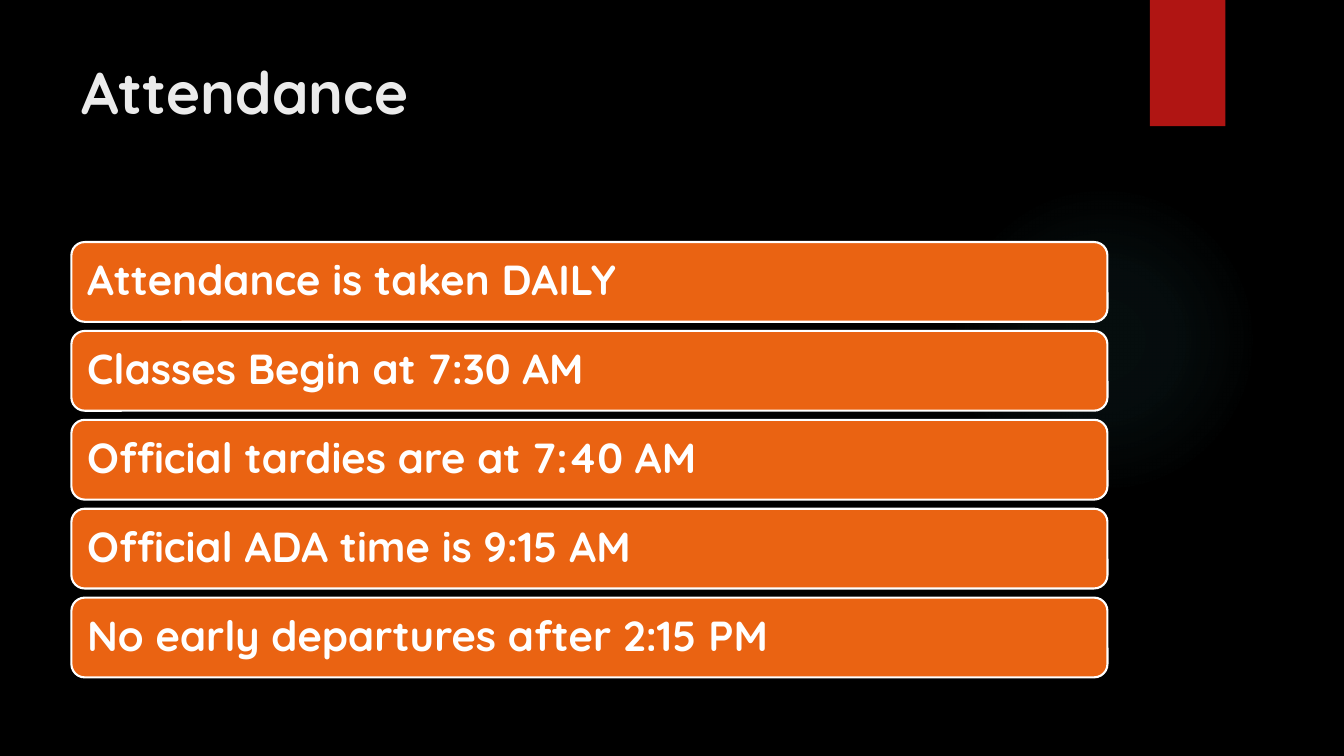
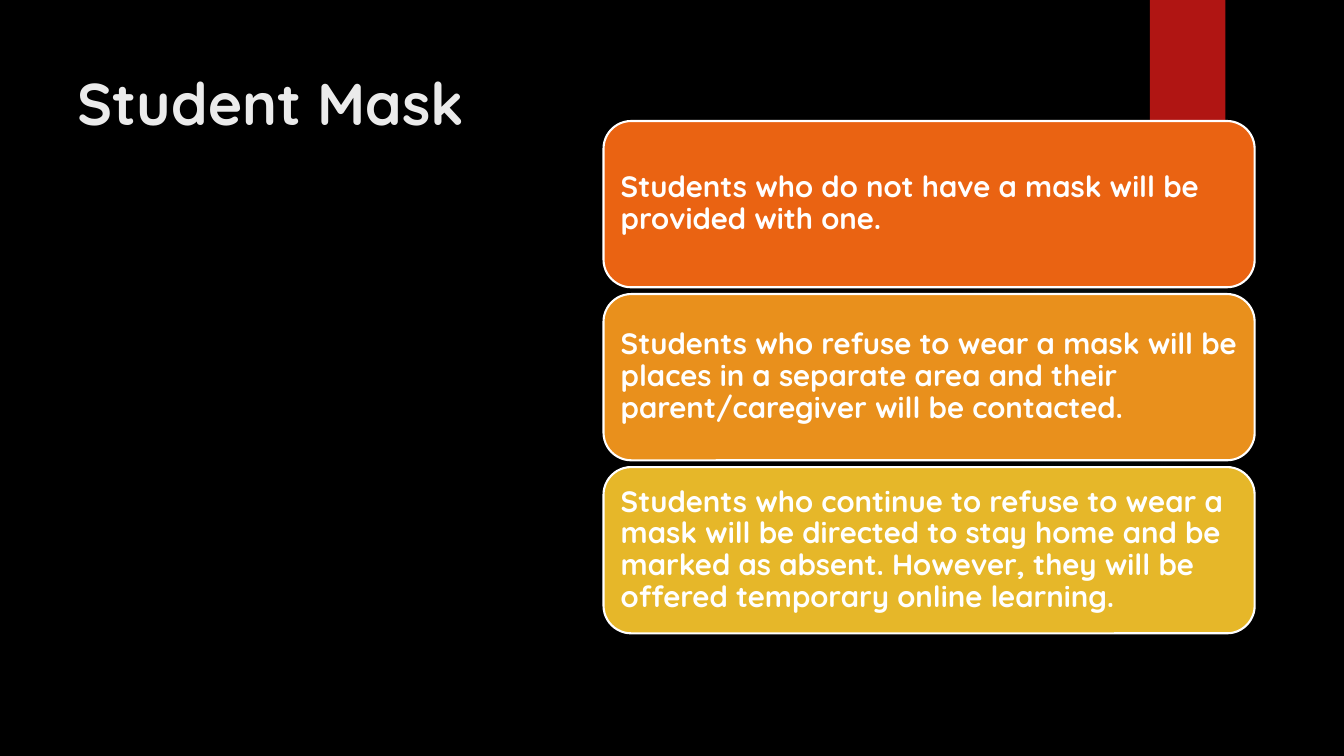
from pptx import Presentation
from pptx.dml.color import RGBColor
from pptx.enum.shapes import MSO_SHAPE as Shape
from pptx.enum.text import MSO_ANCHOR as Anchor, PP_ALIGN as Align
from pptx.oxml import parse_xml
from pptx.oxml.ns import nsdecls, qn
from pptx.util import Cm, Pt

BLACK = RGBColor(0x00, 0x00, 0x00)
WHITE = RGBColor(0xFF, 0xFF, 0xFF)
TITLE_GREY = RGBColor(0xEB, 0xEB, 0xEB)
RED = RGBColor(0xB0, 0x15, 0x13)
ORANGE = RGBColor(0xEA, 0x63, 0x12)
AMBER = RGBColor(0xE9, 0x90, 0x1C)
YELLOW = RGBColor(0xE6, 0xB7, 0x29)
TEAL = RGBColor(0x50, 0xB9, 0xC1)
FONT = "Quicksand"

GLOW_STOPS = [(0, 7), (36, 6), (69, 0)]  # position and opacity, in percent
stops = "".join(
    f'<a:gs pos="{position * 1000}"><a:srgbClr val="{TEAL}">'
    f'<a:alpha val="{opacity * 1000}"/></a:srgbClr></a:gs>'
    for position, opacity in GLOW_STOPS)
GLOW_FILL = (
    f'<a:gradFill {nsdecls("a")} rotWithShape="1"><a:gsLst>{stops}</a:gsLst>'
    '<a:path path="circle"><a:fillToRect l="50000" t="50000" r="50000" b="50000"/>'
    '</a:path></a:gradFill>')


def write(shape, text, size, color, align=Align.LEFT):
    frame = shape.text_frame
    frame.word_wrap = True
    para = frame.paragraphs[0]
    para.alignment = align
    span = para.add_run()
    span.text = text
    span.font.name = FONT
    span.font.size = Pt(size)
    span.font.bold = True
    span.font.color.rgb = color
    return para


def add_page(deck, title, place, align):
    page = deck.slides.add_slide(deck.slide_layouts[6])
    page.background.fill.solid()
    page.background.fill.fore_color.rgb = BLACK

    # Faint round glow
    glow = page.shapes.add_shape(Shape.OVAL, Cm(23.9), Cm(4.65), Cm(7.82), Cm(7.82))
    glow.shadow.inherit = False
    glow.line.fill.background()
    glow.fill.background()
    properties = glow.fill._xPr
    properties.replace(properties.find(qn("a:noFill")), parse_xml(GLOW_FILL))

    # Red tab at the top edge
    tab = page.shapes.add_shape(Shape.RECTANGLE, Cm(28.98), 0, Cm(1.9), Cm(3.18))
    tab.shadow.inherit = False
    tab.line.fill.background()
    tab.fill.solid()
    tab.fill.fore_color.rgb = RED

    # Title
    box = page.shapes.add_textbox(*[Cm(length) for length in place])
    write(box, title, 42, TITLE_GREY, align)
    return page


# Each page: title, its place and alignment; cards with left, top, width,
# height, pitch, inset, text size, and their texts and colours
PAGES = [
    ("Attendance", (1.8, 1.27, 26.14, 3.89), Align.LEFT,
     (1.8, 6.1, 26.11, 2.01, 2.24, 0.3, 30),
     [("Attendance is taken DAILY", ORANGE),
      ("Classes Begin at 7:30 AM", ORANGE),
      ("Official tardies are at 7:40 AM", ORANGE),
      ("Official ADA time is 9:15 AM", ORANGE),
      ("No early departures after 2:15 PM", ORANGE)]),
    ("Student Mask", (1.6, 1.55, 10.46, 15.85), Align.CENTER,
     (15.21, 3.05, 16.41, 4.19, 4.36, 0.23, 21),
     [("Students who do not have a mask will be provided with one.", ORANGE),
      ("Students who refuse to wear a mask will be places in a "
       "separate area and their parent/caregiver will be contacted.", AMBER),
      ("Students who continue to refuse to wear a mask will be directed to "
       "stay home and be marked as absent. However, they will be offered "
       "temporary online learning.", YELLOW)]),
]

deck = Presentation()
deck.slide_width, deck.slide_height = Cm(33.87), Cm(19.05)

for title, place, align, layout, cards in PAGES:
    page = add_page(deck, title, place, align)
    left, top, width, height, pitch, inset, size = layout

    # Stack of rounded cards
    for row, (text, color) in enumerate(cards):
        card = page.shapes.add_shape(Shape.ROUNDED_RECTANGLE, Cm(left),
                                     Cm(top + row * pitch), Cm(width), Cm(height))
        card.shadow.inherit = False
        card.fill.solid()
        card.fill.fore_color.rgb = color
        card.line.color.rgb = WHITE
        card.line.width = Pt(1.5)
        frame = card.text_frame
        frame.vertical_anchor = Anchor.MIDDLE
        frame.margin_left = frame.margin_right = Cm(inset)
        frame.margin_top = frame.margin_bottom = Cm(inset)
        write(card, text, size, WHITE).line_spacing = 0.9

deck.save("out.pptx")
